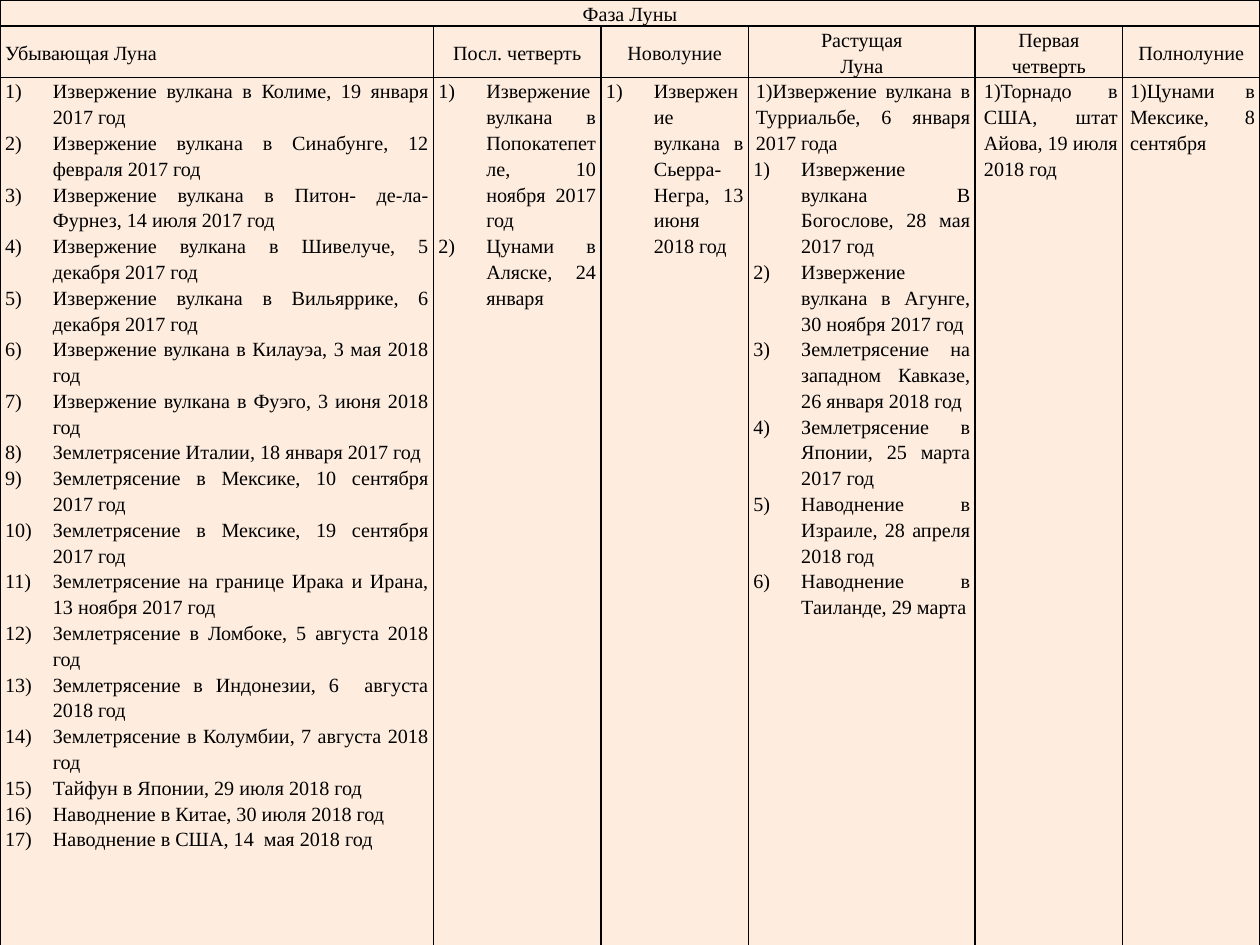
from dataclasses import dataclass

from lxml import etree
from pptx import Presentation
from pptx import util as u
from pptx.dml.color import RGBColor
from pptx.enum import text as t
from pptx.oxml import ns


@dataclass(frozen=True)
class Theme:
    back: str = "FEEDDF"
    ink: str = "000000"
    font: str = "Times New Roman"
    size: float = 11.5
    lead: float = 1.15
    rule: float = 1


LOOK = Theme()
MID, LEFT = t.PP_ALIGN.CENTER, t.PP_ALIGN.JUSTIFY
COLS = [3.44, 1.33, 1.17, 1.8, 1.17, 1.09]
ROWS = [0.2, 0.41, 6.89]
HANG = 0.38

TITLE = "Фаза Луны"
# Each phase: heading lines, plain first entry with its indent, numbered entries
PHASES = [
    (["Убывающая Луна"], None, [
        "Извержение вулкана в Колиме, 19 января 2017 год ",
        "Извержение вулкана в Синабунге, 12 февраля 2017 год ",
        "Извержение вулкана в Питон- де-ла- Фурнез, 14 июля 2017 год",
        "Извержение вулкана в Шивелуче, 5 декабря 2017 год",
        "Извержение вулкана в Вильяррике, 6 декабря 2017 год",
        "Извержение вулкана в Килауэа, 3 мая 2018 год",
        "Извержение вулкана в Фуэго, 3 июня 2018 год",
        "Землетрясение Италии, 18 января 2017 год",
        "Землетрясение в Мексике, 10 сентября 2017 год",
        "Землетрясение в Мексике, 19 сентября 2017 год",
        "Землетрясение на границе Ирака и Ирана, 13 ноября 2017 год",
        "Землетрясение в Ломбоке, 5 августа 2018 год",
        "Землетрясение в Индонезии, 6  августа 2018 год",
        "Землетрясение в Колумбии, 7 августа 2018 год",
        "Тайфун в Японии, 29 июля 2018 год",
        "Наводнение в Китае, 30 июля 2018 год",
        "Наводнение в США, 14  мая 2018 год"]),
    (["Посл. четверть"], None, [
        "Извержение вулкана в Попокатепетле, 10 ноября 2017 год ",
        "Цунами в Аляске, 24 января"]),
    (["Новолуние"], None, [
        "Извержение вулкана в Сьерра- Негра, 13 июня 2018 год"]),
    (["Растущая", "Луна"],
     ("1)Извержение вулкана в Турриальбе, 6 января 2017 года", 0.02), [
        "Извержение вулкана В Богослове, 28 мая 2017 год",
        "Извержение вулкана в Агунге, 30 ноября 2017 год",
        "Землетрясение  на западном Кавказе, 26 января 2018 год",
        "Землетрясение в Японии, 25 марта 2017 год",
        "Наводнение в Израиле, 28 апреля 2018 год",
        "Наводнение в Таиланде, 29 марта"]),
    (["Первая", "четверть"],
     ("1)Торнадо в США, штат Айова, 19 июля 2018 год", 0.03), []),
    (["Полнолуние"], ("1)Цунами в Мексике, 8 сентября", 0.02), []),
]


def apply(obj, form):
    for name, value in form.items():
        setattr(obj, name, value)


def frame(cell):
    """Draw the four borders of a cell and leave it unfilled."""
    props = cell._tc.get_or_add_tcPr()
    for side in ("lnL", "lnR", "lnT", "lnB"):
        line = etree.SubElement(props, ns.qn(f"a:{side}"), w=str(u.Pt(LOOK.rule)))
        fill = etree.SubElement(line, ns.qn("a:solidFill"))
        etree.SubElement(fill, ns.qn("a:srgbClr"), val=LOOK.ink)
    cell.fill.background()


def write(par, words, align, left=0, num=False):
    """Write one paragraph, numbered with a hanging indent if asked."""
    run = par.add_run()
    run.text = words
    apply(run.font, {"name": LOOK.font, "size": u.Pt(LOOK.size), "bold": False})
    run.font.color.rgb = RGBColor.from_string(LOOK.ink)
    apply(par, {"alignment": align, "line_spacing": LOOK.lead})
    props = par._p.get_or_add_pPr()
    props.set("marL", str(u.Inches(left)))
    props.set("indent", str(u.Inches(-left if num else 0)))
    if num:
        etree.SubElement(props, ns.qn("a:buFont"), typeface="+mj-lt")
        etree.SubElement(props, ns.qn("a:buAutoNum"), type="arabicParenR")


def fill(cell, items, anchor):
    """Fill a cell with items of (words, align, left, num)."""
    apply(cell, {"margin_left": u.Inches(0.04), "margin_right": u.Inches(0.04),
                 "margin_top": 0, "margin_bottom": 0, "vertical_anchor": anchor})
    body = cell.text_frame
    for i, item in enumerate(items):
        write(body.add_paragraph() if i else body.paragraphs[0], *item)


def moon_table(slide, x, y, w, h):
    """Place the table of events by moon phase in the given box."""
    grid = slide.shapes.add_table(
        len(ROWS), len(COLS), *map(u.Inches, (x, y, w, h))).table
    apply(grid, {"first_row": False, "horz_banding": False})
    for col, part in zip(grid.columns, COLS):
        col.width = u.Inches(w * part / sum(COLS))
    for row, part in zip(grid.rows, ROWS):
        row.height = u.Inches(h * part / sum(ROWS))
    for cell in grid.iter_cells():
        frame(cell)

    # Title across all columns
    top = grid.cell(0, 0)
    top.merge(grid.cell(0, len(COLS) - 1))
    fill(top, [(TITLE, MID)], t.MSO_ANCHOR.MIDDLE)

    # Phase headings and their events
    for c, (head, first, events) in enumerate(PHASES):
        align = MID if c else LEFT
        fill(grid.cell(1, c), [(line, align) for line in head], t.MSO_ANCHOR.MIDDLE)
        items = [(first[0], LEFT, first[1])] if first else []
        items += [(event, LEFT, HANG, True) for event in events]
        fill(grid.cell(2, c), items, t.MSO_ANCHOR.TOP)


def main():
    deck = Presentation()
    apply(deck, {"slide_width": u.Inches(10), "slide_height": u.Inches(7.5)})
    slide = deck.slides.add_slide(deck.slide_layouts[6])
    back = slide.background.fill
    back.solid()
    back.fore_color.rgb = RGBColor.from_string(LOOK.back)
    moon_table(slide, 0, 0, 10, 7.5)
    deck.save("out.pptx")


if __name__ == "__main__":
    main()
